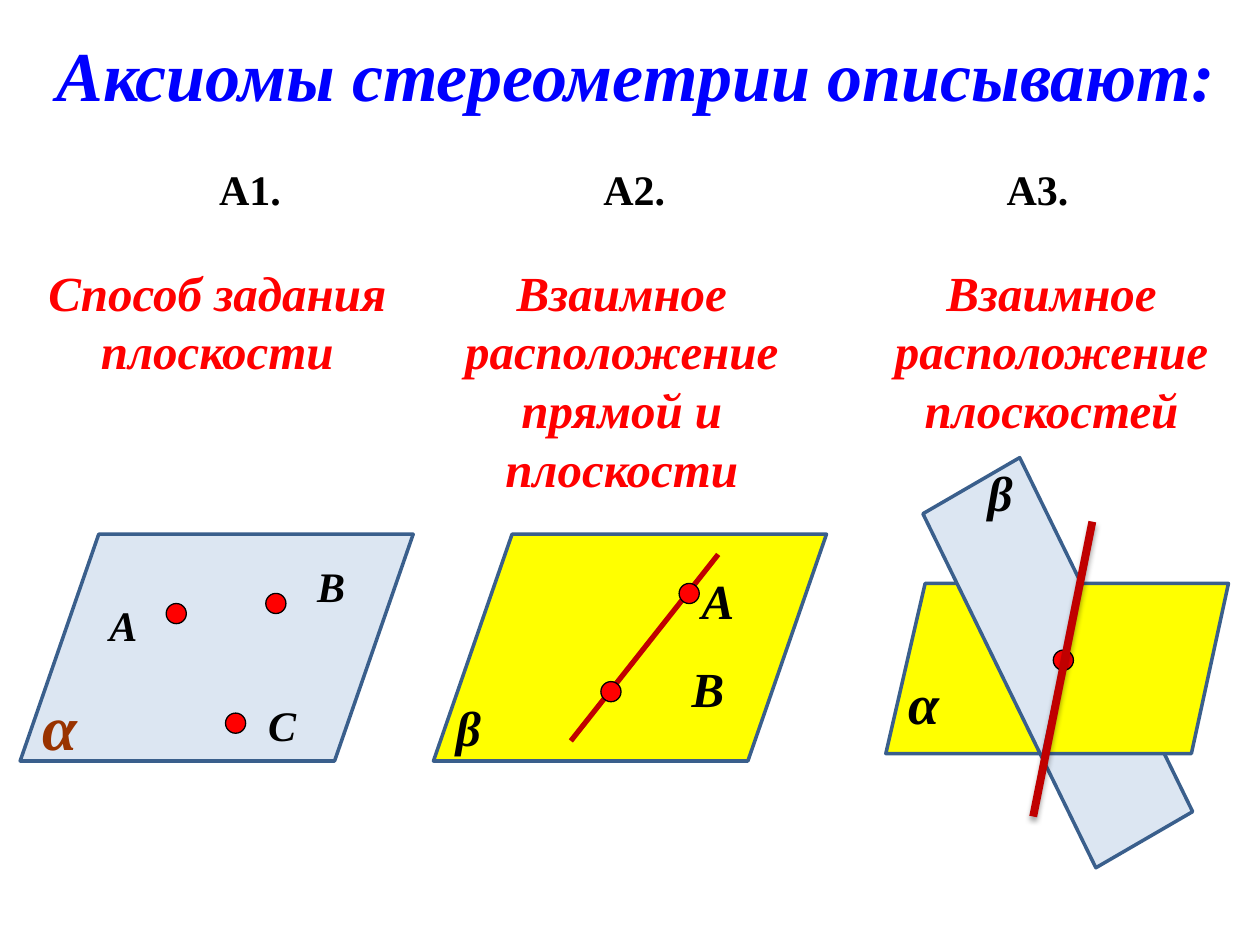
from lxml import etree
from pptx import Presentation
from pptx.dml.color import RGBColor as RGB
from pptx.enum.shapes import MSO_CONNECTOR as Conn, MSO_SHAPE as Kind
from pptx.enum.text import MSO_ANCHOR as Anchor, MSO_AUTO_SIZE as Fit, PP_ALIGN as Align
from pptx.oxml.ns import qn
from pptx.util import Pt

COLORS = {
    "title": "0000FF", "red": "FF0000", "black": "000000", "brown": "993300",
    "blue": "DCE6F2", "yellow": "FFFF00", "edge": "3A5F8C", "line": "C00000",
}
FONT = "Times New Roman"
TOP = 90
DOT = 11.5
PLANE = (224.6, 129.6)


def tint(name):
    return RGB.from_string(COLORS[name])


def style(para, size, color, italic=True, align=Align.LEFT):
    para.alignment = align
    font = para.font
    font.name, font.size = FONT, Pt(size)
    font.bold, font.italic = True, italic
    font.color.rgb = tint(color)


def write(slide, box, text, size, color="black", italic=True, align=Align.LEFT):
    frame = slide.shapes.add_textbox(*map(Pt, box)).text_frame
    frame.word_wrap = True
    frame.auto_size = Fit.SHAPE_TO_FIT_TEXT
    frame.text = text
    style(frame.paragraphs[0], size, color, italic, align)


def draw(slide, kind, box, fill, edge, width):
    shape = slide.shapes.add_shape(kind, *map(Pt, box))
    shape.shadow.inherit = False
    shape.fill.solid()
    shape.fill.fore_color.rgb = tint(fill)
    shape.line.color.rgb = tint(edge)
    shape.line.width = Pt(width)
    return shape


def plane(slide, box, fill):
    return draw(slide, Kind.FLOWCHART_DATA, box, fill, "edge", 2)


def dot(slide, left, top, kind=Kind.OVAL):
    draw(slide, kind, (left, top, DOT, DOT), "red", "black", 0.75)


def stroke(slide, start, end, width):
    line = slide.shapes.add_connector(Conn.STRAIGHT, *map(Pt, start + end))
    line.line.color.rgb = tint("line")
    line.line.width = Pt(width)
    return etree.SubElement(line._element.spPr, qn("a:effectLst"))


def shade(effects):
    outer = etree.SubElement(effects, qn("a:outerShdw"), blurRad=str(Pt(3.1)),
                             dist=str(Pt(1.8)), dir="5400000", rotWithShape="0")
    color = etree.SubElement(outer, qn("a:srgbClr"), val=COLORS["black"])
    etree.SubElement(color, qn("a:alpha"), val="35000")


def title(slide, box, text):
    head = slide.shapes.title
    head.left, head.top, head.width, head.height = map(Pt, box)
    frame = head.text_frame
    frame.text = text
    frame.word_wrap = True
    frame.auto_size = Fit.NONE
    frame.vertical_anchor = Anchor.TOP
    style(frame.paragraphs[0], 40, "title", align=Align.CENTER)


def heads(slide, name, name_box, text, text_box):
    write(slide, name_box, name, 24, italic=False)
    write(slide, text_box, text, 28, "red", align=Align.CENTER)


def points(slide, x, y):
    heads(slide, "А1.", (x + 106.6, y, 60, 36),
          "Способ задания плоскости", (x + 5, y + 56.2, 215.3, 75))
    plane(slide, (x, y + 215.3, *PLANE), "blue")
    for left, top in ((83.5, 254.9), (117.4, 317.5), (140.4, 249.1)):
        dot(slide, x + left, y + top)
    for text, left, top in (("А", 43.9, 249.1), ("В", 162.7, 226.8), ("С", 134.7, 306)):
        write(slide, (x + left, y + top, 36, 36.7), text, 24)
    write(slide, (x + 5.8, y + 299.5, 45.4, 51), "α", 36, "brown")


def chord(slide, x, y):
    heads(slide, "А2.", (x + 90, y, 67.7, 36),
          "Взаимное расположение прямой и плоскости", (x - 17.3, y + 56.2, 249.8, 143))
    plane(slide, (x, y + 215.3, *PLANE), "yellow")
    stroke(slide, (x + 162.7, y + 226.8), (x + 78.5, y + 333.4), 3)
    for left, top in ((95.7, 299.5), (140.4, 243.4)):
        dot(slide, x + left, y + top)
    for text, left, top in (("А", 146.1, 232.6), ("В", 140.4, 283), ("β", 5.7, 305.3)):
        write(slide, (x + left, y + top, 40, 41), text, 28)


def cross(slide, x, y):
    heads(slide, "А3.", (x + 61.9, y, 60.5, 36),
          "Взаимное расположение плоскостей", (x - 24.5, y + 56.2, 238.3, 109))
    plane(slide, (x, y + 243.4, 112.3, 97.2), "yellow")
    strip = plane(slide, (x + 58.3, y + 176.4, 79.9, 224.6), "blue")
    strip.rotation = 149.9
    plane(slide, (x + 90, y + 243.4, 105.8, 97.2), "yellow")
    write(slide, (x + 5.7, y + 288.7, 24.5, 46), "α", 32)
    write(slide, (x + 51.1, y + 170.6, 19.5, 41), "β", 28)
    dot(slide, x + 95.7, y + 281.5, Kind.FLOWCHART_CONNECTOR)
    shade(stroke(slide, (x + 84.2, y + 376.6), (x + 118, y + 208.1), 4.5))


def main():
    deck = Presentation()
    deck.slide_width, deck.slide_height = Pt(720), Pt(540)
    slide = deck.slides.add_slide(deck.slide_layouts[5])
    title(slide, (15.8, 14.4, 694.8, 55.4), "Аксиомы стереометрии описывают:")
    for part, left in ((points, 11.5), (chord, 247.7), (cross, 506.2)):
        part(slide, left, TOP)
    deck.save("out.pptx")


if __name__ == "__main__":
    main()
